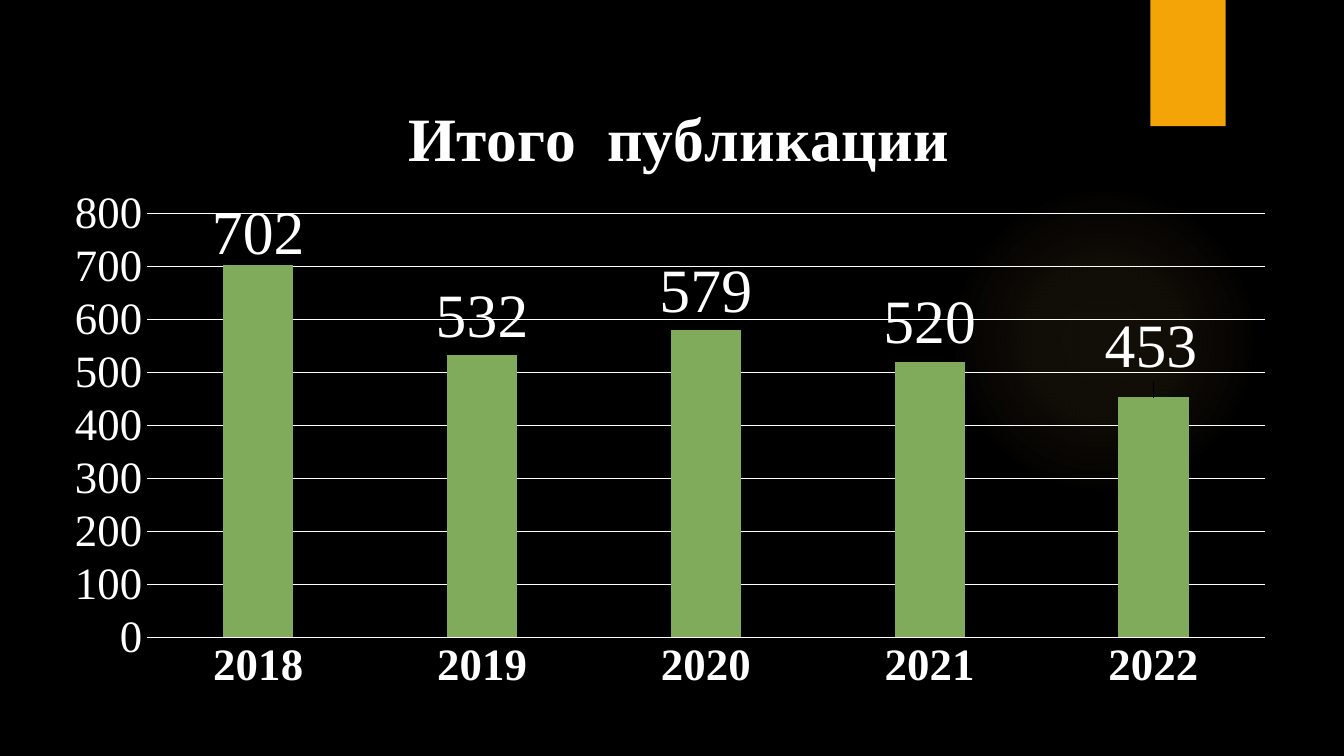
from pptx import Presentation
from pptx.chart.data import CategoryChartData
from pptx.dml.color import RGBColor
from pptx.enum.chart import XL_CHART_TYPE as Kind, XL_LABEL_POSITION as Spot
from pptx.enum.chart import XL_TICK_MARK as Tick
from pptx.enum.shapes import MSO_SHAPE as Preset
from pptx.oxml import parse_xml
from pptx.oxml.ns import nsdecls, qn
from pptx.util import Inches, Pt

WHITE = RGBColor(0xFF, 0xFF, 0xFF)
BLACK = RGBColor(0x00, 0x00, 0x00)
ORANGE = RGBColor(0xF5, 0xA4, 0x08)
GLOW = RGBColor(0xFA, 0xC9, 0x6A)
GREEN = RGBColor(0x7F, 0xAB, 0x5B)
SERIF = "Times New Roman"
WIDE, HIGH = Inches(13.33), Inches(7.5)

YEARS = ["2018", "2019", "2020", "2021", "2022"]
COUNTS = [702, 532, 579, 520, 453]
SHIFTS = {0: (0, 0.011), 4: (-0.002, -0.018)}  # nudged labels, shares of the chart


def box(left, top, width, height):
    """Turn shares of the slide into lengths."""
    return [int(part * side) for part, side in
            zip((left, top, width, height), (WIDE, HIGH, WIDE, HIGH))]


def style(font, size, bold=False, name=SERIF):
    font.size, font.bold, font.name = Pt(size), bold, name
    font.color.rgb = WHITE


def add_plain(slide, preset, place):
    shape = slide.shapes.add_shape(preset, *place)
    shape.shadow.inherit = False
    shape.line.fill.background()
    shape.fill.solid()
    return shape


def add_glow(slide, place):
    shape = add_plain(slide, Preset.OVAL, place)
    stops = "".join(
        f'<a:gs pos="{pos}000"><a:srgbClr val="{GLOW}">'
        f'<a:alpha val="{alpha}000"/></a:srgbClr></a:gs>'
        for pos, alpha in ((0, 7), (36, 6), (69, 0)))
    grad = parse_xml(
        f'<a:gradFill {nsdecls("a")} rotWithShape="1"><a:gsLst>{stops}</a:gsLst>'
        '<a:path path="circle"><a:fillToRect l="50000" t="50000" r="50000" '
        'b="50000"/></a:path></a:gradFill>')
    solid = shape.fill._xPr.find(qn("a:solidFill"))
    solid.getparent().replace(solid, grad)


def set_layout(parent, index, x, y, size=None):
    """Place a chart part by shares of the chart."""
    old = parent.find(qn("c:layout"))
    if old is not None:
        parent.remove(old)
    parts = [("x", x), ("y", y)]
    modes = ""
    if size:
        parts += zip("wh", size)
        modes = '<c:layoutTarget val="inner"/>'
    if parent.tag != qn("c:dLbl"):
        modes += '<c:xMode val="edge"/><c:yMode val="edge"/>'
    values = "".join(f'<c:{key} val="{val}"/>' for key, val in parts)
    parent.insert(index, parse_xml(
        f'<c:layout {nsdecls("c")}><c:manualLayout>{modes}{values}'
        '</c:manualLayout></c:layout>'))


def set_axis(axis, bold):
    axis.major_tick_mark = axis.minor_tick_mark = Tick.NONE
    style(axis.tick_labels.font, 32, bold)


def set_line(line):
    line.color.rgb, line.width = WHITE, Pt(0.75)


def set_labels(series):
    labels = series.data_labels
    labels.show_value = True
    labels.position = Spot.OUTSIDE_END
    style(labels.font, 44)
    for index, shift in SHIFTS.items():
        label = series.points[index].data_label
        style(label.font, 44)
        label.position = Spot.OUTSIDE_END
        set_layout(label._dLbl, 1, *shift)


def add_columns(slide, place):
    data = CategoryChartData()
    data.categories = YEARS
    data.add_series("Series 1", COUNTS)
    chart = slide.shapes.add_chart(Kind.COLUMN_CLUSTERED, *place, data).chart
    style(chart.font, 10, name="League Spartan")
    chart.has_legend = False

    # Title
    title = chart.chart_title
    title.text_frame.text = "Итого  публикации"
    style(title.text_frame.paragraphs[0].runs[0].font, 44, True)
    title.include_in_layout = False
    set_layout(title._element, 1, 0.28, 0.055)

    # Axes and grid
    years, counts = chart.category_axis, chart.value_axis
    set_axis(years, True)
    set_axis(counts, False)
    set_line(years.format.line)
    set_line(counts.major_gridlines.format.line)
    counts.format.line.fill.background()
    counts.minimum_scale, counts.maximum_scale, counts.major_unit = 0, 800, 100

    # Columns
    plot = chart.plots[0]
    plot.gap_width, plot.overlap, plot.vary_by_categories = 219, -27, False
    series = plot.series[0]
    series.format.fill.solid()
    series.format.fill.fore_color.rgb = GREEN
    set_labels(series)
    area = chart._chartSpace.chart.plotArea
    set_layout(area, 0, 0.078, 0.248, (0.902, 0.65))


def main():
    deck = Presentation()
    deck.slide_width, deck.slide_height = WIDE, HIGH
    slide = deck.slides.add_slide(deck.slide_layouts[6])
    back = slide.background.fill
    back.solid()
    back.fore_color.rgb = BLACK

    # Decoration
    add_glow(slide, box(0.706, 0.244, 0.231, 0.411))
    tab = add_plain(slide, Preset.RECTANGLE, box(0.856, 0, 0.056, 0.167))
    tab.fill.fore_color.rgb = ORANGE

    # Publications by year
    add_columns(slide, box(0.037, 0.068, 0.923, 0.863))
    deck.save("out.pptx")


if __name__ == "__main__":
    main()
